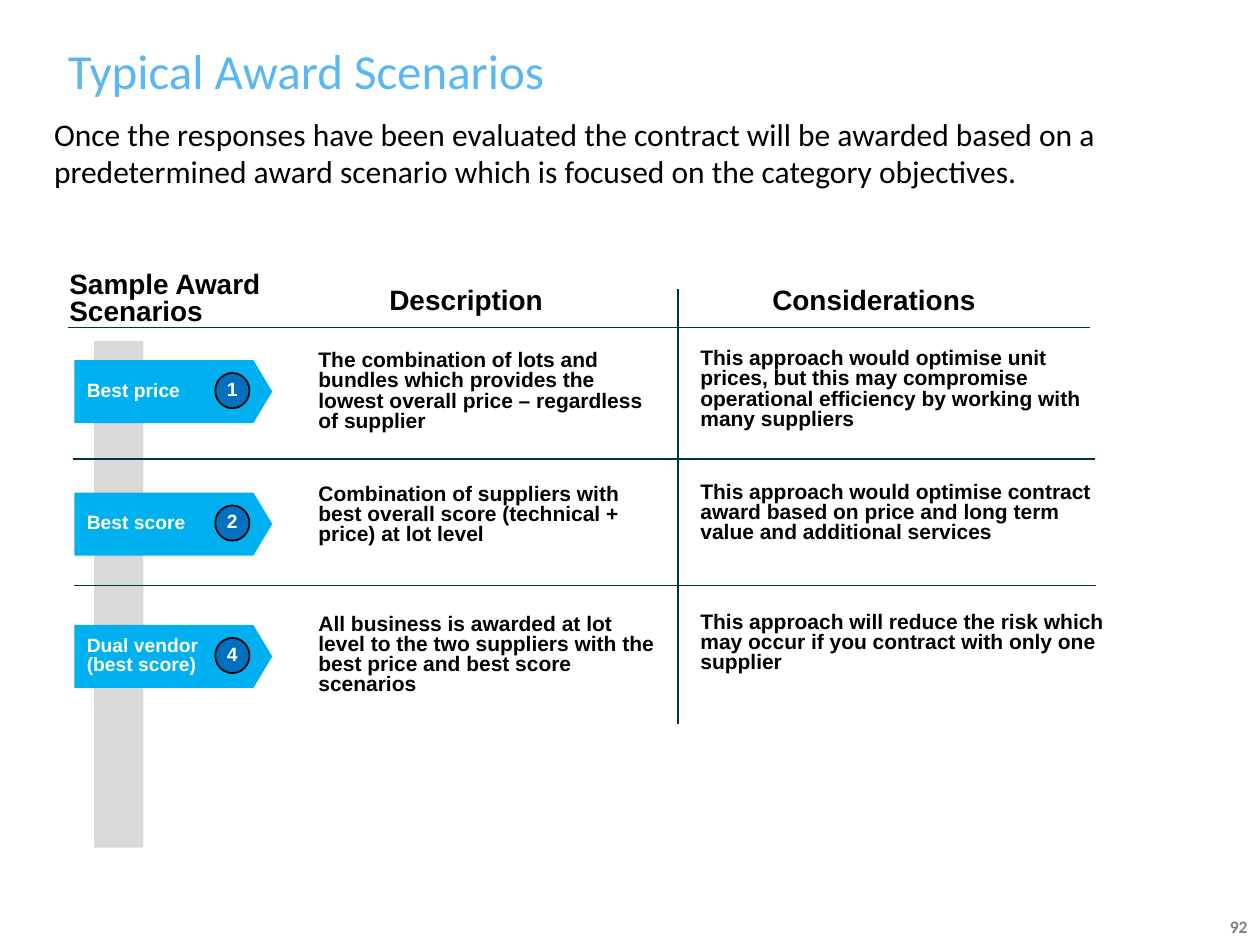
"""Build the slide on typical award scenarios."""
from lxml.etree import SubElement
from pptx import Presentation
from pptx.dml.color import RGBColor
from pptx.enum.shapes import MSO_CONNECTOR as Line, MSO_SHAPE as Shape
from pptx.enum.text import MSO_ANCHOR as Anchor, MSO_AUTO_SIZE as AutoSize, PP_ALIGN as Align
from pptx.oxml.ns import qn
from pptx.util import Cm, Pt

COLORS = {
    "title": "59B7F2", "text": "000000", "page": "808080", "rule": "003344",
    "bar": "D9D9D9", "arrow": "00B0F0", "badge": "0070C0", "light": "FFFFFF",
}
PADDED = (0.25, 0.13, 0.25, 0.13)
FLUSH = (0, 0, 0, 0)
SCENARIOS = [
    ("1", "Best price", 6.96,
     "The combination of lots and bundles which provides the lowest overall price – regardless of supplier",
     "This approach would optimise unit prices, but this may compromise operational efficiency "
     "by working with many suppliers"),
    ("2", "Best score", 9.65,
     "Combination of suppliers with best overall score (technical + price) at lot level",
     "This approach would optimise contract award based on price and long term value and additional services"),
    ("4", "Dual vendor\n(best score)", 12.27,
     "All business is awarded at lot level to the two suppliers with the best price and best score scenarios",
     "This approach will reduce the risk which may occur if you contract with only one supplier"),
]


class SlideBuilder:
    """Hold the style and the current slide."""

    def __init__(self, slide, colors):
        self.slide = slide
        self.colors = colors

    def color(self, name):
        return RGBColor.from_string(self.colors[name])

    def set_text(self, holder, text, size, color="text", font="Arial", bold=True, spacing=0.8,
                 align=Align.LEFT, anchor=Anchor.TOP, insets=PADDED, wrap=True):
        frame = holder.text_frame
        frame.text = text
        frame.word_wrap = wrap
        frame.auto_size = AutoSize.NONE
        frame.vertical_anchor = anchor
        frame.margin_left, frame.margin_top, frame.margin_right, frame.margin_bottom = map(Cm, insets)
        for paragraph in frame.paragraphs:
            paragraph.alignment = align
            paragraph.line_spacing = spacing
            for run in paragraph.runs:
                run.font.name = font
                run.font.size = Pt(size)
                run.font.bold = bold
                run.font.color.rgb = self.color(color)

    def title(self, text, box):
        heading = self.slide.shapes.title
        heading.left, heading.top, heading.width, heading.height = map(Cm, box)
        self.set_text(heading, text, 28, "title", "Calibri", False, 1.0,
                      anchor=Anchor.BOTTOM, insets=(0, 0.13, 0.25, 0))

    def text(self, text, box, size, **style):
        self.set_text(self.slide.shapes.add_textbox(*map(Cm, box)), text, size, **style)

    def shape(self, kind, box, fill, outline=None, parent=None):
        shape = (parent or self.slide).shapes.add_shape(kind, *map(Cm, box))
        shape.shadow.inherit = False
        shape.fill.solid()
        shape.fill.fore_color.rgb = self.color(fill)
        if outline:
            shape.line.color.rgb = self.color(outline)
            shape.line.width = Pt(1)
        else:
            shape.line.fill.background()
        return shape

    def scenario(self, number, label, top):
        group = self.slide.shapes.add_group_shape()
        arrow = self.shape(Shape.PENTAGON, (1.5, top, 3.99, 1.27), "arrow", parent=group)
        arrow.adjustments[0] = 0.3
        self.set_text(arrow, label, 11, "light", anchor=Anchor.MIDDLE)
        badge = self.shape(Shape.OVAL, (4.34, top + 0.26, 0.69, 0.71), "badge", "text", group)
        self.set_text(badge, number, 11, "light", align=Align.CENTER, anchor=Anchor.MIDDLE, wrap=False)

    def rule(self, start, end):
        line = self.slide.shapes.add_connector(Line.STRAIGHT, *map(Cm, start + end))
        line.line.color.rgb = self.color("rule")
        line.line.width = Pt(0.75)
        SubElement(line._element.spPr, qn("a:effectLst"))


def main():
    deck = Presentation()
    deck.slide_width, deck.slide_height = Cm(25.4), Cm(19.05)
    builder = SlideBuilder(deck.slides.add_slide(deck.slide_layouts[5]), COLORS)

    builder.title("Typical Award Scenarios", (1.37, 0.03, 22.66, 1.98))
    builder.text("Once the responses have been evaluated the contract will be awarded based on a "
                 "predetermined award scenario which is focused on the category objectives.",
                 (0.84, 2.18, 23.6, 1.63), 18, font="Calibri", bold=False, spacing=1.0)
    builder.text("92", (20.7, 18.29, 4.7, 0.76), 10, color="page", font="Calibri", spacing=1.0,
                 align=Align.RIGHT, anchor=Anchor.MIDDLE)

    builder.text("Sample Award Scenarios", (1.4, 5.51, 5.05, 1.09), 16, anchor=Anchor.MIDDLE, insets=FLUSH)
    for heading, left in (("Description", 7.85), ("Considerations", 15.57)):
        builder.text(heading, (left, 5.82, 5.03, 0.69), 16, insets=FLUSH)

    builder.shape(Shape.RECTANGLE, (1.9, 6.88, 0.99, 10.21), "bar")
    for row, (number, label, top, description, consideration) in enumerate(SCENARIOS):
        builder.scenario(number, label, 7.26 + row * 2.67)
        builder.text(description, (6.17, top, 7.39, 2.01), 12)
        builder.text(consideration, (13.87, top - 0.04, 8.64, 2.01), 12)

    builder.rule((13.67, 5.82), (13.67, 14.6))
    for left, top in ((1.37, 6.6), (1.47, 9.25), (1.5, 11.81)):
        builder.rule((left, top), (left + 20.6, top))

    deck.save("out.pptx")


if __name__ == "__main__":
    main()
